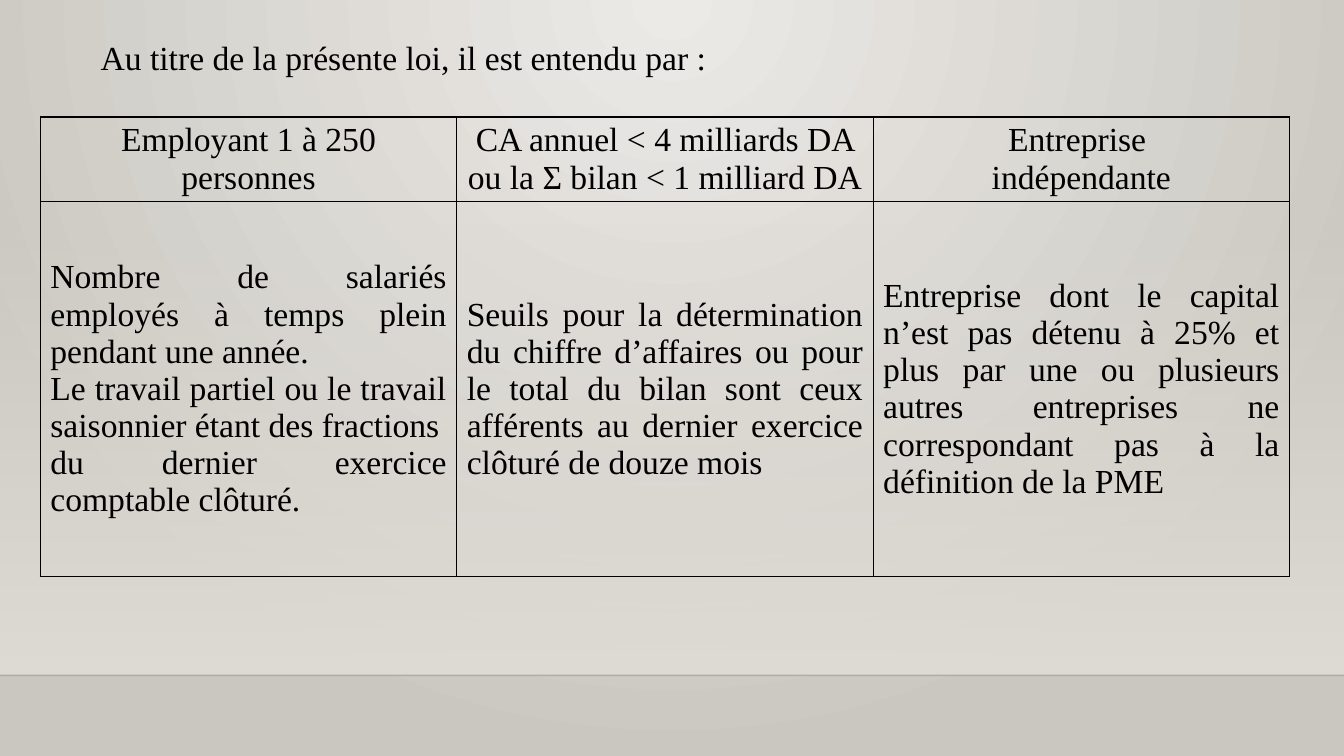
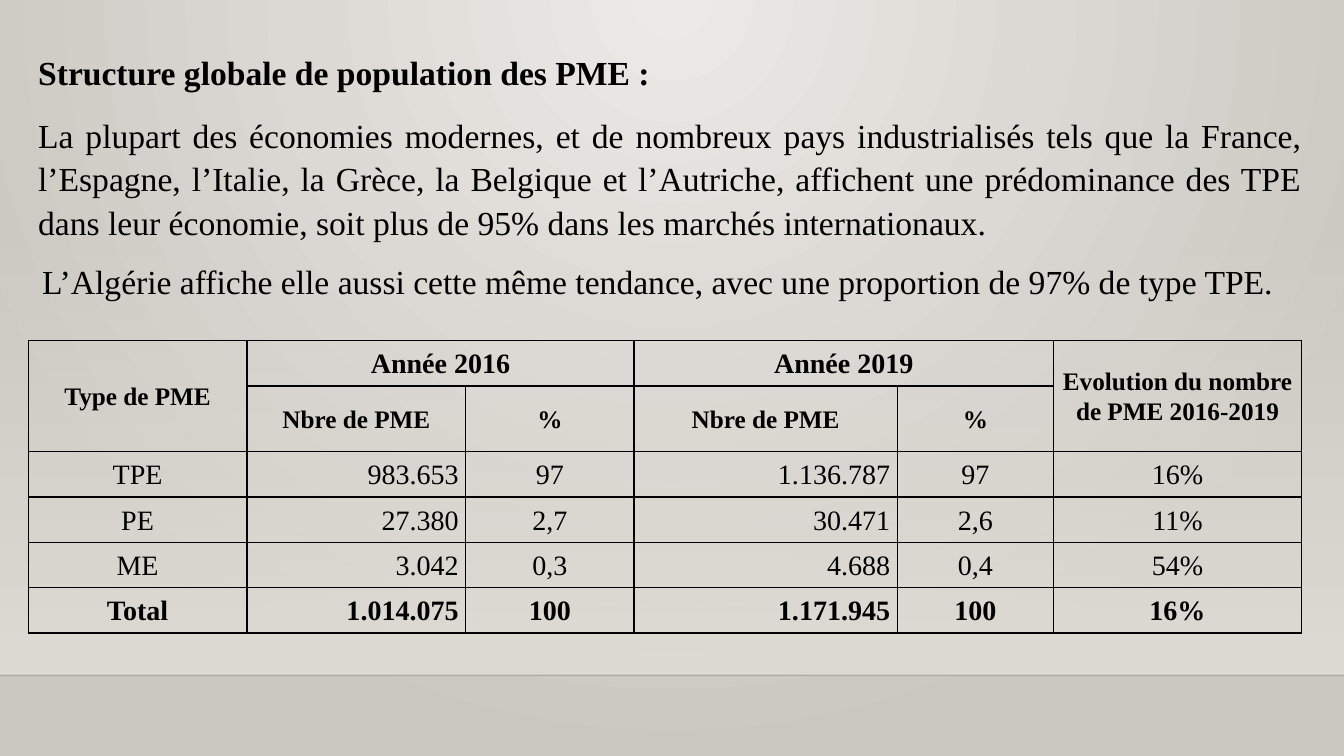
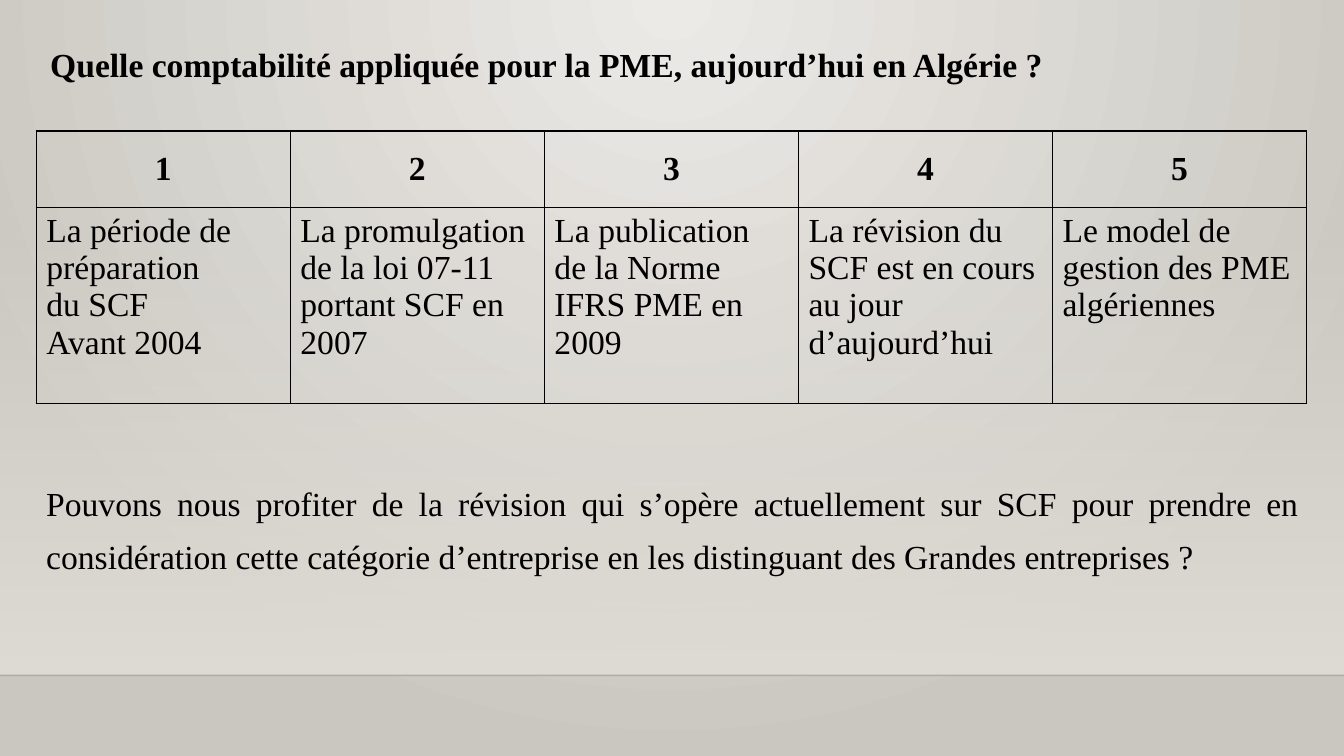
"""Three slides on small and medium enterprises: definition, structure, accounting."""
from lxml.etree import SubElement
from pptx import Presentation
from pptx.dml.color import RGBColor
from pptx.enum.shapes import MSO_CONNECTOR, MSO_SHAPE
from pptx.enum.text import MSO_ANCHOR, PP_ALIGN
from pptx.oxml.ns import qn
from pptx.util import Inches, Pt

FONT = "Times New Roman"
BLACK = RGBColor(0, 0, 0)
LIGHT = RGBColor(0xEC, 0xEA, 0xE7)
GREY = RGBColor(0xCA, 0xC7, 0xC1)
SAND = RGBColor(0xDF, 0xDB, 0xD5)
WIDTH, HEIGHT = 13.33, 7.5
BAND_TOP, FLOOR = 2.21, 6.7
BODY_SIZE = 24
LINE_SPACING = 1.09
LEFT, CENTER, RIGHT = PP_ALIGN.LEFT, PP_ALIGN.CENTER, PP_ALIGN.RIGHT
JUSTIFY = PP_ALIGN.JUSTIFY
TOP, MIDDLE = MSO_ANCHOR.TOP, MSO_ANCHOR.MIDDLE

DEFINITION_INTRO = "Au titre de la présente loi, il est entendu par :"
DEFINITION = [
    ["Employant 1 à 250 personnes",
     "CA annuel < 4 milliards DA ou la Σ bilan < 1 milliard DA",
     "Entreprise \vindépendante"],
    ["Nombre de salariés employés à temps plein pendant une année.\n"
     "Le travail partiel ou le travail saisonnier étant des fractions\n"
     "du dernier exercice comptable clôturé.",
     "Seuils pour la détermination du chiffre d’affaires ou pour le total du bilan "
     "sont ceux afférents au dernier exercice clôturé de douze mois",
     "Entreprise dont le capital n’est pas détenu à 25% et plus par une ou plusieurs "
     "autres entreprises ne correspondant pas à la définition de la PME"],
]

STRUCTURE_TITLE = "Structure globale de population des PME :"
STRUCTURE_WORLD = (
    "La plupart des économies modernes, et de nombreux pays industrialisés tels que la "
    "France, l’Espagne, l’Italie, la Grèce, la Belgique et l’Autriche, affichent une "
    "prédominance des TPE dans leur économie, soit plus de 95% dans les marchés "
    "internationaux.")
STRUCTURE_ALGERIA = ("L’Algérie affiche elle aussi cette même tendance, avec une "
                     "proportion de 97% de type TPE.")
STRUCTURE = [
    ["Type de PME", "Année 2016", "", "Année 2019", "",
     "Evolution du nombre de PME 2016-2019"],
    ["", "Nbre de PME", "%", "Nbre de PME", "%", ""],
    ["TPE", "983.653", "97", "1.136.787", "97", "16%"],
    ["PE", "27.380", "2,7", "30.471", "2,6", "11%"],
    ["ME", "3.042", "0,3", "4.688", "0,4", "54%"],
    ["Total", "1.014.075", "100", "1.171.945", "100", "16%"],
]
STRUCTURE_MERGES = [((0, 0), (1, 0)), ((0, 1), (0, 2)), ((0, 3), (0, 4)), ((0, 5), (1, 5))]

ACCOUNTING_TITLE = "Quelle comptabilité appliquée pour la PME, aujourd’hui en Algérie ?"
ACCOUNTING = [
    ["1", "2", "3", "4", "5"],
    ["La période de préparation \vdu SCF\nAvant 2004",
     "La promulgation de la loi 07-11 portant SCF en 2007",
     "La publication de la Norme IFRS PME en 2009",
     "La révision du SCF est en cours au jour d’aujourd’hui",
     "Le model de gestion des PME algériennes"],
]
ACCOUNTING_QUESTION = (
    "Pouvons nous profiter de la révision qui s’opère actuellement sur SCF pour prendre en "
    "considération cette catégorie d’entreprise en les distinguant des Grandes entreprises ?")


def set_alpha(color_parent, percent):
    color = next(color_parent.iter(qn("a:srgbClr")))
    SubElement(color, qn("a:alpha"), val=str(percent * 1000))


def set_gradient(fill, first, last):
    fill.gradient()
    for stop, color, position in zip(fill.gradient_stops, (first, last), (0, 1)):
        stop.color.rgb = color
        stop.position = position


def paint_master(master):
    set_gradient(master.background.fill, LIGHT, GREY)
    gradient = next(master.element.iter(qn("a:gradFill")))
    gradient.remove(gradient.find(qn("a:lin")))
    circle = SubElement(gradient, qn("a:path"), path="circle")
    SubElement(circle, qn("a:fillToRect"), l="43000", t="0", r="43000", b="100000")


def add_page(deck):
    page = deck.slides.add_slide(deck.slide_layouts[6])
    band = page.shapes.add_shape(MSO_SHAPE.RECTANGLE, 0, Inches(BAND_TOP),
                                 Inches(WIDTH), Inches(FLOOR - BAND_TOP))
    band.shadow.inherit = False
    band.line.fill.background()
    set_gradient(band.fill, SAND, SAND)
    band.fill.gradient_angle = 270
    set_alpha(next(band.element.iter(qn("a:gs"))), 0)
    edge = page.shapes.add_connector(MSO_CONNECTOR.STRAIGHT, 0, Inches(FLOOR),
                                     Inches(WIDTH), Inches(FLOOR))
    edge.line.color.rgb = BLACK
    edge.line.width = Pt(1)
    set_alpha(edge.element.spPr, 20)
    SubElement(edge.element.spPr, qn("a:effectLst"))
    return page


def write(frame, text, size=BODY_SIZE, bold=False, align=LEFT, spacing=None, after=None):
    frame.text = text
    for paragraph in frame.paragraphs:
        paragraph.alignment = align
        paragraph.line_spacing = spacing
        paragraph.space_after = after
        for span in paragraph.runs:
            span.font.name = FONT
            span.font.size = Pt(size)
            span.font.bold = bold
            span.font.color.rgb = BLACK


def add_text(page, place, text, spacing=1.0, indent=0, **style):
    box = page.shapes.add_textbox(*map(Inches, place))
    box.text_frame.word_wrap = True
    write(box.text_frame, text, spacing=round(spacing * LINE_SPACING, 2), **style)
    if indent:
        box.text_frame.paragraphs[0]._p.get_or_add_pPr().set("marL", str(Inches(indent)))


def add_borders(cell):
    properties = cell._tc.get_or_add_tcPr()
    for side in ("lnL", "lnR", "lnT", "lnB"):
        line = SubElement(properties, qn(f"a:{side}"), w=str(Pt(1)))
        fill = SubElement(line, qn("a:solidFill"))
        SubElement(fill, qn("a:srgbClr"), val=str(BLACK))


def add_grid(page, left, top, columns, heights, content, style_of, merges=()):
    frame = page.shapes.add_table(len(heights), len(columns), Inches(left), Inches(top),
                                  Inches(sum(columns)), Inches(sum(heights)))
    table = frame.table
    table.first_row = table.horz_banding = False
    for column, width in zip(table.columns, columns):
        column.width = Inches(width)
    for row, height in zip(table.rows, heights):
        row.height = Inches(height)
    for start, end in merges:
        table.cell(*start).merge(table.cell(*end))
    for row, texts in enumerate(content):
        for column, text in enumerate(texts):
            cell = table.cell(row, column)
            add_borders(cell)
            cell.fill.background()
            anchor, style = style_of(row, column)
            cell.vertical_anchor = anchor
            if text:
                write(cell.text_frame, text, **style)
    return table


def definition_style(row, column):
    return (MIDDLE, {"align": JUSTIFY}) if row else (TOP, {"align": CENTER})


def structure_style(row, column):
    small = row == 1 or (row == 0 and column in (0, 5))
    return MIDDLE, {
        "size": 18 if small else 20,
        "bold": row in (0, 1, 5),
        "align": RIGHT if row > 1 and column in (1, 3) else CENTER,
        "spacing": 1.07,
        "after": Pt(8),
    }


def accounting_style(row, column):
    return (TOP, {}) if row else (MIDDLE, {"align": CENTER, "bold": True})


def main():
    deck = Presentation()
    deck.slide_width, deck.slide_height = Inches(WIDTH), Inches(HEIGHT)
    paint_master(deck.slide_master)

    page = add_page(deck)
    add_grid(page, 0.4, 1.16, [4.13] * 3, [0.84, 3.72], DEFINITION, definition_style)
    add_text(page, (0.4, 0.25, 9.27, 0.51), DEFINITION_INTRO, spacing=1.07, indent=0.5,
             align=JUSTIFY)

    page = add_page(deck)
    add_text(page, (0.28, 0.43, 6.68, 0.5), STRUCTURE_TITLE, bold=True)
    add_text(page, (0.28, 1.05, 12.73, 1.31), STRUCTURE_WORLD, align=JUSTIFY)
    table = add_grid(page, 0.28, 3.38, [2.17, 2.17, 1.67, 2.61, 1.55, 2.46],
                     [0.45, 0.65] + [0.45] * 4, STRUCTURE, structure_style, STRUCTURE_MERGES)
    for cell in table.iter_cells():
        cell.margin_left = cell.margin_right = Inches(0.07)
        cell.margin_top = cell.margin_bottom = 0
    add_text(page, (0.32, 2.5, 12.59, 0.5), STRUCTURE_ALGERIA, align=JUSTIFY)

    page = add_page(deck)
    add_text(page, (0.36, 4.62, 12.62, 1.23), ACCOUNTING_QUESTION, spacing=1.2, align=JUSTIFY)
    add_grid(page, 0.36, 1.3, [2.52] * 5, [0.76, 1.94], ACCOUNTING, accounting_style)
    add_text(page, (0.4, 0.26, 12.53, 1.03), ACCOUNTING_TITLE, spacing=1.2, bold=True)

    deck.save("out.pptx")


if __name__ == "__main__":
    main()
